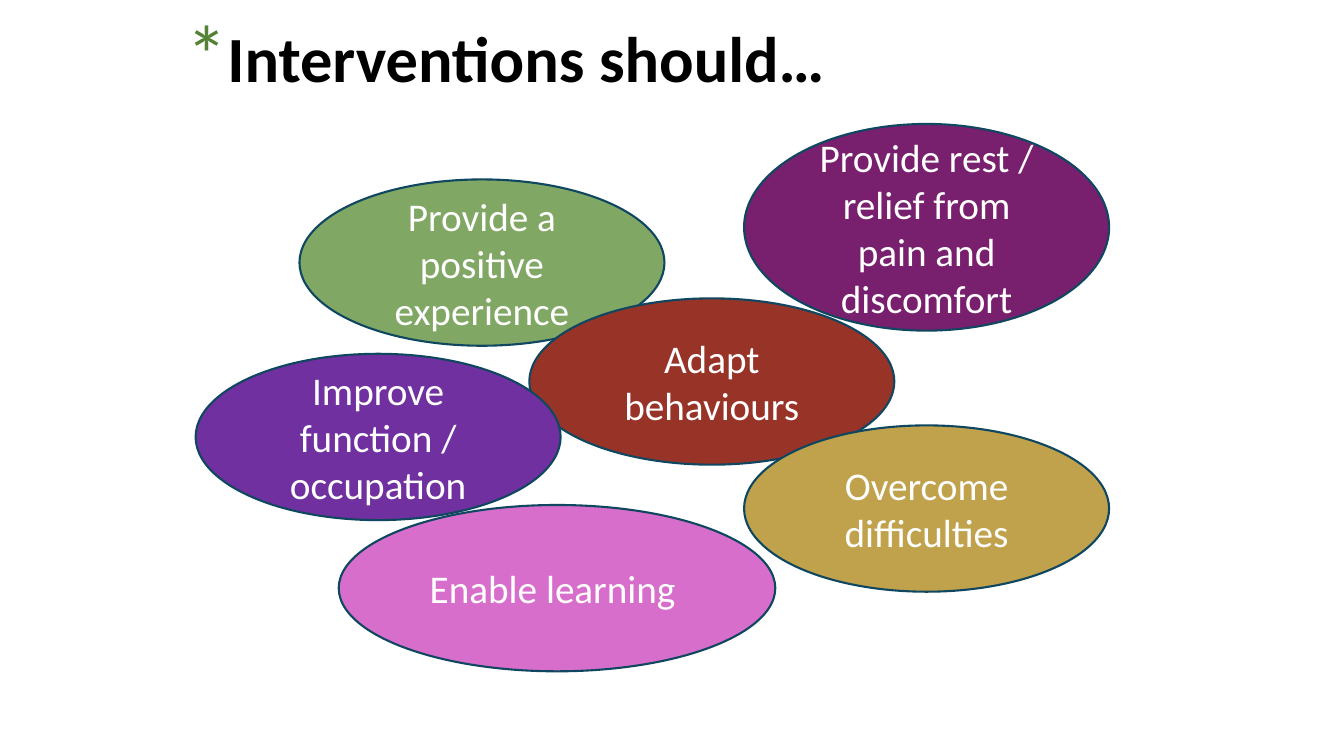
from dataclasses import dataclass

import lxml.etree
import pptx
import pptx.dml.color
import pptx.enum.shapes
import pptx.enum.text
import pptx.oxml.ns
import pptx.util

Inches = pptx.util.Inches
Pt = pptx.util.Pt
OUTLINE = "104760"
WHITE = "FFFFFF"


@dataclass(frozen=True)
class Goal:
    wording: str
    fill: str
    left: float
    top: float
    width: float = 3.62
    height: float = 1.65


GOALS = [
    Goal("Provide a positive experience", "81A765", 2.97, 1.78),
    Goal("Enable learning ", "D86ECC", 3.36, 5.01, width=4.33),
    Goal("Adapt behaviours", "983328", 5.25, 2.96),
    Goal("Overcome difficulties", "C0A24C", 7.38, 4.22),
    Goal("Provide rest / relief from pain and discomfort", "78206E", 7.38, 1.23, height=2.05),
    Goal("Improve function / occupation", "7030A0", 1.94, 3.51),
]

FRAME_FORMAT = {
    "word_wrap": True,
    "margin_left": Inches(0.1),
    "margin_right": Inches(0.1),
    "margin_top": Inches(0.05),
    "margin_bottom": Inches(0.05),
}
HEADING_FONT = {"name": "Calibri", "size": Pt(46), "bold": True}
GOAL_FONT = {"name": "Calibri", "size": Pt(28), "bold": False}


def colour(value: str) -> pptx.dml.color.RGBColor:
    return pptx.dml.color.RGBColor.from_string(value)


def apply_format(target: object, values: dict) -> None:
    for attribute, value in values.items():
        setattr(target, attribute, value)


def write_text(frame, wording: str, font: dict, text_colour: str):
    apply_format(frame, FRAME_FORMAT)
    paragraph = frame.paragraphs[0]
    run = paragraph.add_run()
    run.text = wording
    apply_format(run.font, font)
    run.font.color.rgb = colour(text_colour)
    return paragraph


def add_bullet(paragraph, mark: str, mark_colour: str, percent: int, indent: float) -> None:
    properties = paragraph._p.get_or_add_pPr()
    properties.set("marL", str(Inches(indent)))
    properties.set("indent", str(-Inches(indent)))
    qn = pptx.oxml.ns.qn
    bullet_colour = lxml.etree.SubElement(properties, qn("a:buClr"))
    lxml.etree.SubElement(bullet_colour, qn("a:srgbClr"), val=mark_colour)
    lxml.etree.SubElement(properties, qn("a:buSzPct"), val=str(percent * 1000))
    lxml.etree.SubElement(properties, qn("a:buFont"), typeface="Calibri")
    lxml.etree.SubElement(properties, qn("a:buChar"), char=mark)


def draw_heading(slide) -> None:
    heading = slide.shapes.add_textbox(Inches(1.75), Inches(0.13), Inches(7.12), Inches(1.25))
    paragraph = write_text(heading.text_frame, "Interventions should…", HEADING_FONT, "000000")
    add_bullet(paragraph, "*", "548235", 128, 0.35)


def draw_goal(slide, goal: Goal) -> None:
    bubble = slide.shapes.add_shape(
        pptx.enum.shapes.MSO_SHAPE.OVAL,
        Inches(goal.left), Inches(goal.top), Inches(goal.width), Inches(goal.height),
    )
    bubble.shadow.inherit = False
    bubble.fill.solid()
    bubble.fill.fore_color.rgb = colour(goal.fill)
    bubble.line.color.rgb = colour(OUTLINE)
    bubble.line.width = Pt(1.5)
    bubble.text_frame.vertical_anchor = pptx.enum.text.MSO_ANCHOR.MIDDLE
    paragraph = write_text(bubble.text_frame, goal.wording, GOAL_FONT, WHITE)
    paragraph.alignment = pptx.enum.text.PP_ALIGN.CENTER


def main() -> None:
    presentation = pptx.Presentation()
    apply_format(presentation, {"slide_width": Inches(13.33), "slide_height": Inches(7.5)})
    slide = presentation.slides.add_slide(presentation.slide_layouts[6])
    slide.background.fill.solid()
    slide.background.fill.fore_color.rgb = colour(WHITE)
    draw_heading(slide)
    for goal in GOALS:
        draw_goal(slide, goal)
    presentation.save("out.pptx")


if __name__ == "__main__":
    main()
